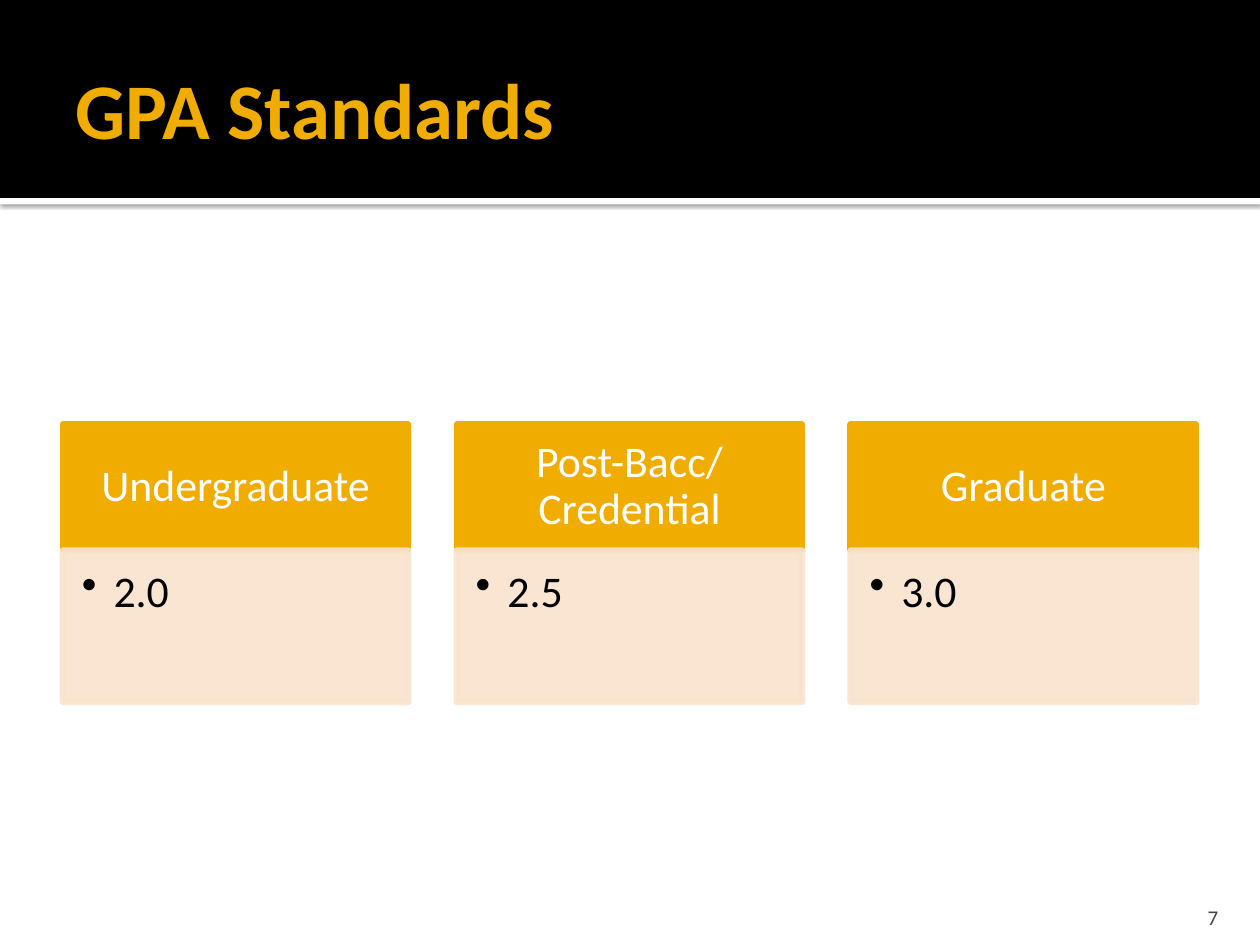
from lxml.etree import SubElement
from pptx import Presentation
from pptx.dml.color import RGBColor
from pptx.enum.shapes import MSO_SHAPE
from pptx.enum.text import MSO_ANCHOR, PP_ALIGN
from pptx.oxml.ns import qn
from pptx.util import Cm, Pt

FONT = "Calibri"
GOLD, PEACH, BLACK, WHITE, GREY = "F0AD00", "F9E3CC", "000000", "FFFFFF", "454545"

STANDARDS = [("Undergraduate", "2.0"), ("Post-Bacc/Credential", "2.5"), ("Graduate", "3.0")]
CARD_LEFT, CARD_WIDTH, CARD_PITCH = 1.27, 6.96, 7.94
HEADER_TOP, HEADER_HEIGHT = 8.56, 2.52
BODY_TOP, BODY_HEIGHT = 11.1, 3.05


def rgb(color):
    return RGBColor.from_string(color)


def set_alpha(fill, percent):
    """Make a solid fill partly transparent."""
    clr = fill._xPr.find(qn("a:solidFill"))[0]
    SubElement(clr, qn("a:alpha"), val=str(percent * 1000))


def add_rect(s, left, top, width, height, color, line_width=None, alpha=None):
    sp = s.shapes.add_shape(MSO_SHAPE.RECTANGLE, Cm(left), Cm(top), Cm(width), Cm(height))
    sp.shadow.inherit = False
    fills = [sp.fill]
    if line_width:
        sp.line.width = Pt(line_width)
        fills.append(sp.line.fill)
    else:
        sp.line.fill.background()
    for fill in fills:
        fill.solid()
        fill.fore_color.rgb = rgb(color)
        if alpha:
            set_alpha(fill, alpha)
    return sp


def add_shadow(sp):
    """Drop a soft shadow straight down."""
    effects = sp._element.spPr.find(qn("a:effectLst"))
    shadow = SubElement(effects, qn("a:outerShdw"), blurRad=str(Pt(2.5)),
                        dist=str(Pt(0.8)), dir="5400000", algn="tl", rotWithShape="0")
    clr = SubElement(shadow, qn("a:srgbClr"), val=BLACK)
    SubElement(clr, qn("a:alpha"), val="60000")


def set_text(sp, text, size, color, insets, anchor, align=PP_ALIGN.LEFT, bold=False):
    tf = sp.text_frame
    tf.word_wrap = True
    tf.vertical_anchor = anchor
    tf.margin_left, tf.margin_top, tf.margin_right, tf.margin_bottom = map(Cm, insets)
    tf.text = text
    p = tf.paragraphs[0]
    p.alignment = align
    font = p.runs[0].font
    font.name, font.size, font.bold = FONT, Pt(size), bold
    font.color.rgb = rgb(color)
    return p


def add_text(s, left, top, width, height, *text_args, **text_options):
    sp = s.shapes.add_textbox(Cm(left), Cm(top), Cm(width), Cm(height))
    set_text(sp, *text_args, **text_options)


def add_bullet(p, indent):
    pPr = p._p.get_or_add_pPr()
    pPr.set("marL", str(Cm(indent)))
    pPr.set("indent", str(-Cm(indent)))
    SubElement(pPr, qn("a:buChar"), char="•")


def add_card(s, left, name, gpa):
    # Header with the student level
    header = add_rect(s, left, HEADER_TOP, CARD_WIDTH, HEADER_HEIGHT, GOLD, 3.78)
    p = set_text(header, name, 25, WHITE, (0.48, 0.28, 0.48, 0.28),
                 MSO_ANCHOR.MIDDLE, PP_ALIGN.CENTER)
    p.line_spacing = 0.9

    # Body with the required GPA
    body = add_rect(s, left, BODY_TOP, CARD_WIDTH, BODY_HEIGHT, PEACH, 3.78, alpha=90)
    p = set_text(body, gpa, 25, BLACK, (0.38, 0.38, 0.48, 0.56), MSO_ANCHOR.TOP)
    p.line_spacing = 0.9
    add_bullet(p, 0.64)


def main():
    prs = Presentation()
    prs.slide_width, prs.slide_height = Cm(25.4), Cm(19.05)
    s = prs.slides.add_slide(prs.slide_layouts[6])

    # Title band with a white edge
    add_shadow(add_rect(s, 0, 3.99, 25.4, 0.13, WHITE))
    add_rect(s, 0, 0, 25.4, 3.99, BLACK)
    add_text(s, 1.27, 0.43, 22.86, 3.48, "GPA Standards", 45, GOLD,
             (0.25, 0.13, 0.13, 0.13), MSO_ANCHOR.MIDDLE, bold=True)

    # One card per student level
    for i, (name, gpa) in enumerate(STANDARDS):
        add_card(s, CARD_LEFT + i * CARD_PITCH, name, gpa)

    # Slide number
    add_text(s, 22.78, 17.98, 2.03, 0.76, "7", 12, GREY,
             (0.25, 0.13, 0.25, 0), MSO_ANCHOR.BOTTOM, PP_ALIGN.RIGHT)

    prs.save("out.pptx")


if __name__ == "__main__":
    main()
